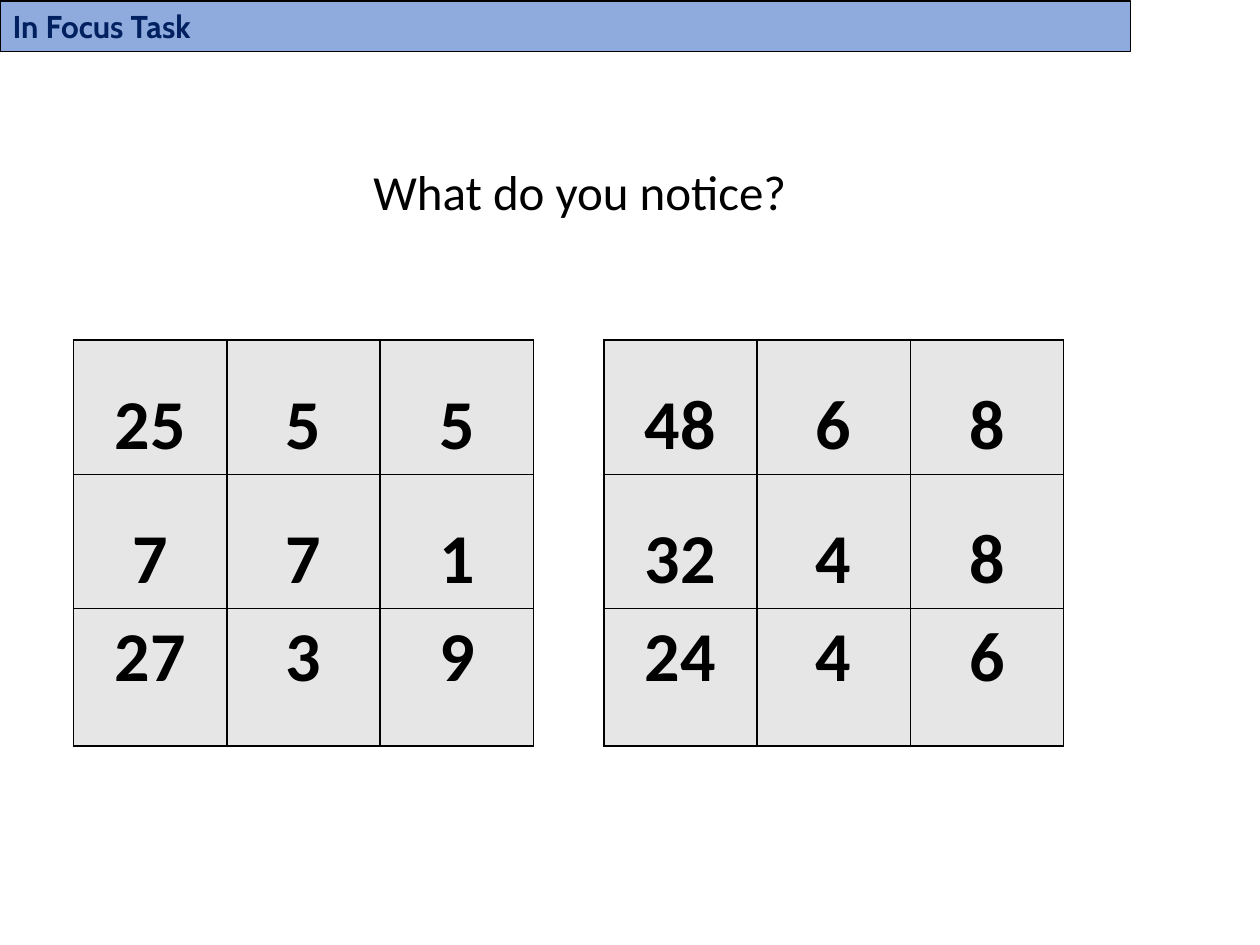
from dataclasses import dataclass

from lxml import etree
from pptx import Presentation
from pptx.dml.color import RGBColor
from pptx.enum import text
from pptx.oxml import ns
from pptx.util import Pt


@dataclass(frozen=True)
class Theme:
    bar: RGBColor = RGBColor(0x8F, 0xAA, 0xDC)
    heading: RGBColor = RGBColor(0x00, 0x20, 0x60)
    ink: RGBColor = RGBColor(0, 0, 0)
    cell: RGBColor = RGBColor(0xE7, 0xE6, 0xE6)
    heading_font: str = "Cabin"
    body_font: str = "Calibri"
    heading_size: int = 18
    question_size: int = 28
    number_size: int = 40


THEME = Theme()

# Number grids: left edge in points and the rows of values
GRIDS = [
    (42, [(25, 5, 5), (7, 7, 1), (27, 3, 9)]),
    (345, [(48, 6, 8), (32, 4, 8), (24, 4, 6)]),
]
GRID_TOP = 194.4
COL_WIDTH = 87.6
ROW_HEIGHTS = [76.65, 76.65, 78.5]
TOP_MARGINS = [24.2, 24.2, 3.6]


def write(tf, content, font, size, color, align, bold=False):
    """Put one formatted paragraph in a text frame."""
    tf.text = content
    p = tf.paragraphs[0]
    p.alignment = align
    p.font.name = font
    p.font.size = Pt(size)
    p.font.bold = bold
    p.font.color.rgb = color


def add_heading_bar(s, content):
    sp = s.shapes.title
    sp.left, sp.top, sp.width, sp.height = Pt(0), Pt(0.6), Pt(646), Pt(29)
    sp.fill.solid()
    sp.fill.fore_color.rgb = THEME.bar
    sp.line.color.rgb = THEME.ink
    sp.line.width = Pt(0.75)
    tf = sp.text_frame
    tf.auto_size = text.MSO_AUTO_SIZE.NONE
    tf.vertical_anchor = text.MSO_ANCHOR.TOP
    write(tf, content, THEME.heading_font, THEME.heading_size, THEME.heading,
          text.PP_ALIGN.LEFT, bold=True)


def add_question(s, content):
    tf = s.shapes.add_textbox(Pt(130.3), Pt(88.6), Pt(402), Pt(41)).text_frame
    tf.word_wrap = True
    write(tf, content, THEME.body_font, THEME.question_size, THEME.ink,
          text.PP_ALIGN.CENTER)


def add_borders(cell, width=1):
    """Draw all four cell borders; they must come before the cell's fill."""
    tc_pr = cell._tc.get_or_add_tcPr()
    for i, side in enumerate(("lnL", "lnR", "lnT", "lnB")):
        ln = etree.Element(ns.qn(f"a:{side}"), w=str(Pt(width)))
        fill = etree.SubElement(ln, ns.qn("a:solidFill"))
        etree.SubElement(fill, ns.qn("a:srgbClr"), val=str(THEME.ink))
        tc_pr.insert(i, ln)


def add_number_grid(s, left, rows):
    n_cols = len(rows[0])
    table = s.shapes.add_table(len(rows), n_cols, Pt(left), Pt(GRID_TOP),
                               Pt(COL_WIDTH * n_cols),
                               Pt(sum(ROW_HEIGHTS))).table
    table.first_row = table.horz_banding = False
    for col in table.columns:
        col.width = Pt(COL_WIDTH)
    for r, values in enumerate(rows):
        table.rows[r].height = Pt(ROW_HEIGHTS[r])
        for c, value in enumerate(values):
            cell = table.cell(r, c)
            cell.margin_top = Pt(TOP_MARGINS[r])
            cell.margin_bottom = Pt(0)
            cell.fill.solid()
            cell.fill.fore_color.rgb = THEME.cell
            add_borders(cell)
            write(cell.text_frame, str(value), THEME.body_font,
                  THEME.number_size, THEME.ink, text.PP_ALIGN.CENTER, bold=True)


def main():
    prs = Presentation()
    prs.slide_width, prs.slide_height = Pt(720), Pt(540)
    s = prs.slides.add_slide(prs.slide_layouts.get_by_name("Title Only"))

    # Heading and question
    add_heading_bar(s, "In Focus Task")
    add_question(s, "What do you notice?")

    # Two grids side by side
    for left, rows in GRIDS:
        add_number_grid(s, left, rows)

    prs.save("out.pptx")


if __name__ == "__main__":
    main()
